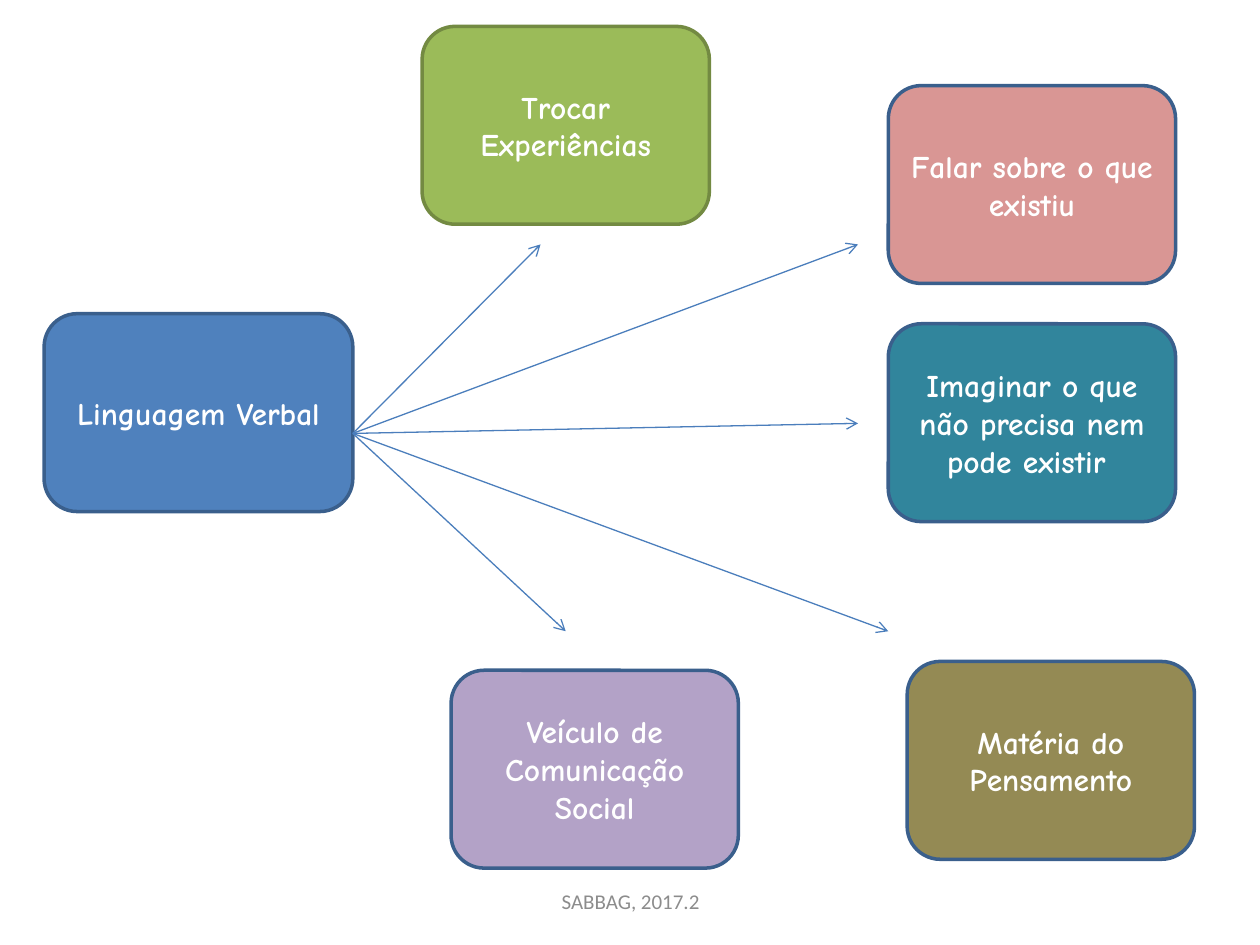
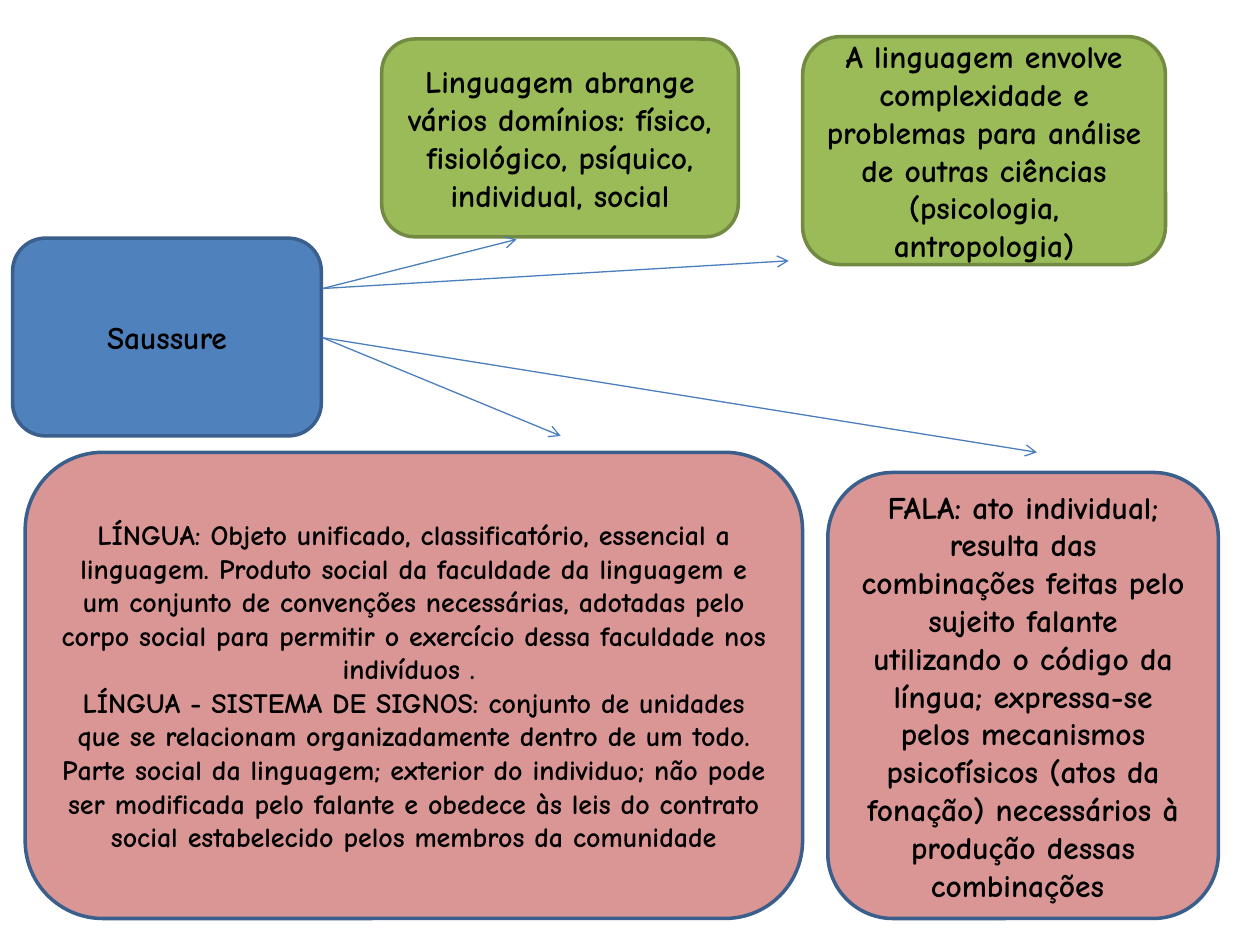
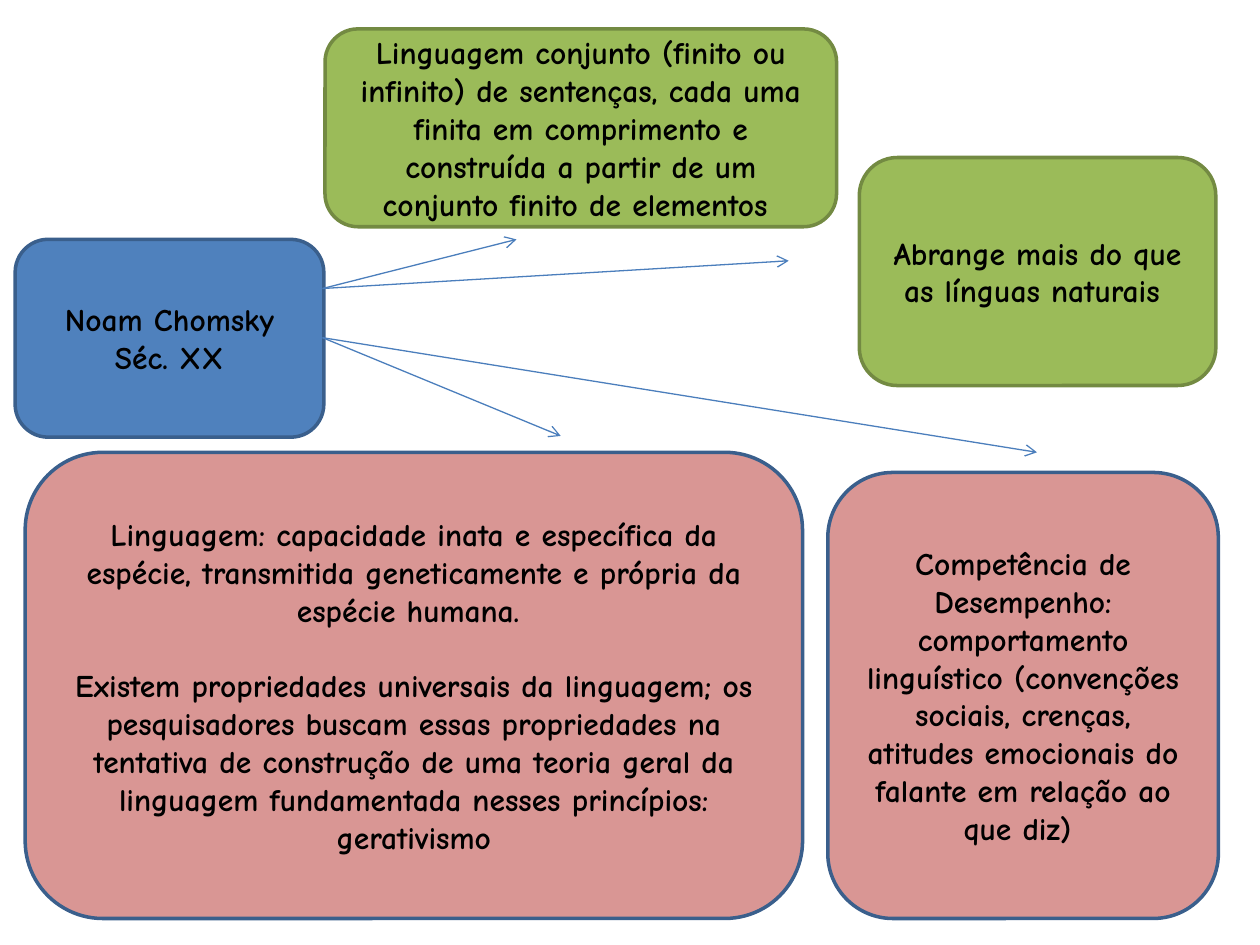
from dataclasses import dataclass

from lxml import etree
from pptx import Presentation
from pptx import util as u
from pptx.dml.color import RGBColor
from pptx.enum import shapes, text
from pptx.oxml import ns

WHITE = RGBColor(0xFF, 0xFF, 0xFF)
BLACK = RGBColor(0x00, 0x00, 0x00)
GRAY = RGBColor(0x8C, 0x8C, 0x8C)
BLUE = RGBColor(0x4F, 0x81, 0xBD)
GREEN = RGBColor(0x9B, 0xBB, 0x59)
PINK = RGBColor(0xD9, 0x96, 0x94)
TEAL = RGBColor(0x31, 0x85, 0x9C)
OLIVE = RGBColor(0x94, 0x8A, 0x54)
LILAC = RGBColor(0xB3, 0xA2, 0xC7)
BLUE_EDGE = RGBColor(0x3A, 0x5F, 0x8C)
GREEN_EDGE = RGBColor(0x73, 0x8A, 0x42)
ARROW_BLUE = RGBColor(0x4B, 0x7E, 0xBC)

BOX_FONT = "Comic Neue"
FOOTER_FONT = "Calibri"

Point = tuple[float, float]
HUB_SIZE = (2.45, 1.57)
PURPOSE_SIZE = (2.28, 1.57)
LEFT_PANEL = (0.2, 3.59, 6.17, 3.7)
RIGHT_PANEL = (6.57, 3.75, 3.1, 3.54)


@dataclass(frozen=True)
class Box:
    """A rounded box; each line of words is a paragraph, lengths in inches."""
    words: str
    left: float
    top: float
    width: float
    height: float
    fill: RGBColor
    size: int = 18
    gap: float = 0


@dataclass(frozen=True)
class Fan:
    """Arrows that leave one point."""
    start: Point
    ends: tuple[Point, ...]


@dataclass(frozen=True)
class Diagram:
    boxes: tuple[Box, ...]
    fans: tuple[Fan, ...]
    color: RGBColor = BLACK
    footer: str = ""


AUTHOR_FANS = (
    Fan((2.56, 2.68), ((4.45, 3.46), (8.23, 3.59))),
    Fan((2.56, 2.29), ((4.1, 1.9), (6.26, 2.07))),
)

DIAGRAMS = (
    Diagram(
        boxes=(
            Box("Linguagem Verbal", 0.35, 2.49, *HUB_SIZE, BLUE),
            Box("Trocar Experiências", 3.35, 0.21, *PURPOSE_SIZE, GREEN),
            Box("Falar sobre o que existiu", 7.05, 0.68, *PURPOSE_SIZE, PINK),
            Box("Imaginar o que não precisa nem pode existir ",
                7.05, 2.57, *PURPOSE_SIZE, TEAL),
            Box("Matéria do Pensamento", 7.2, 5.25, *PURPOSE_SIZE, OLIVE),
            Box("Veículo de Comunicação Social",
                3.58, 5.32, *PURPOSE_SIZE, LILAC),
        ),
        fans=(Fan((2.8, 3.44), ((4.29, 1.94), (6.81, 1.94), (6.81, 3.36),
                                (7.05, 5.01), (4.49, 5.01))),),
        color=WHITE,
        footer="SABBAG, 2017.2",
    ),
    Diagram(
        boxes=(
            Box("Saussure", 0.1, 1.89, *HUB_SIZE, BLUE),
            Box("Linguagem abrange vários domínios: físico, fisiológico, "
                "psíquico, individual, social", 3.03, 0.31, 2.83, 1.57, GREEN),
            Box("A linguagem envolve complexidade e problemas para análise "
                "de outras ciências (psicologia, antropologia)",
                6.37, 0.29, 2.88, 1.81, GREEN),
            Box("LÍNGUA: Objeto unificado, classificatório, essencial a "
                "linguagem. Produto social da faculdade da linguagem e um "
                "conjunto de convenções necessárias, adotadas pelo corpo "
                "social para permitir o exercício dessa faculdade nos "
                "indivíduos . \n"
                "LÍNGUA - SISTEMA DE SIGNOS: conjunto de unidades que se "
                "relacionam organizadamente dentro de um todo. Parte social "
                "da linguagem; exterior do individuo; não pode ser modificada "
                "pelo falante e obedece às leis do contrato social "
                "estabelecido pelos membros da comunidade",
                *LEFT_PANEL, PINK, size=16),
            Box("FALA: ato individual; resulta das combinações feitas pelo "
                "sujeito falante utilizando o código da língua; expressa-se "
                "pelos mecanismos psicofísicos (atos da fonação) necessários "
                "à produção dessas combinações ", *RIGHT_PANEL, PINK),
        ),
        fans=AUTHOR_FANS,
    ),
    Diagram(
        boxes=(
            Box("Noam Chomsky\nSéc. XX", 0.12, 1.9, *HUB_SIZE, BLUE),
            Box("Linguagem conjunto (finito ou infinito) de sentenças, cada "
                "uma finita em comprimento e construída a partir de um "
                "conjunto finito de elementos ", 2.58, 0.23, 4.06, 1.57, GREEN),
            Box("Abrange mais do que as línguas naturais ",
                6.82, 1.25, 2.83, 1.81, GREEN),
            Box("Linguagem: capacidade inata e específica da espécie, "
                "transmitida geneticamente e própria da espécie humana. \n"
                "Existem propriedades universais da linguagem; os "
                "pesquisadores buscam essas propriedades na tentativa de "
                "construção de uma teoria geral da linguagem fundamentada "
                "nesses princípios: gerativismo",
                *LEFT_PANEL, PINK, gap=21.5),
            Box("Competência de Desempenho: comportamento linguístico "
                "(convenções sociais, crenças, atitudes emocionais do falante "
                "em relação ao que diz) ", *RIGHT_PANEL, PINK),
        ),
        fans=AUTHOR_FANS,
    ),
)


def write_text(shape, words: str, font_name: str, size: int,
               color: RGBColor, bold: bool = False, gap: float = 0) -> None:
    frame = shape.text_frame
    frame.word_wrap = True
    frame.vertical_anchor = text.MSO_ANCHOR.MIDDLE
    frame.text = words
    for index, paragraph in enumerate(frame.paragraphs):
        paragraph.alignment = text.PP_ALIGN.CENTER
        if index and gap:
            paragraph.space_before = u.Pt(gap)
        for run in paragraph.runs:
            run.font.name = font_name
            run.font.size = u.Pt(size)
            run.font.bold = bold
            run.font.color.rgb = color


def draw_box(slide, box: Box, color: RGBColor) -> None:
    shape = slide.shapes.add_shape(
        shapes.MSO_SHAPE.ROUNDED_RECTANGLE, u.Inches(box.left),
        u.Inches(box.top), u.Inches(box.width), u.Inches(box.height))
    shape.shadow.inherit = False
    shape.fill.solid()
    shape.fill.fore_color.rgb = box.fill
    shape.line.color.rgb = GREEN_EDGE if box.fill == GREEN else BLUE_EDGE
    shape.line.width = u.Pt(2)
    write_text(shape, box.words, BOX_FONT, box.size, color, True, box.gap)


def draw_arrow(slide, start: Point, end: Point) -> None:
    connector = slide.shapes.add_connector(
        shapes.MSO_CONNECTOR.STRAIGHT,
        *(u.Inches(value) for value in (*start, *end)))
    connector.line.color.rgb = ARROW_BLUE
    connector.line.width = u.Pt(0.75)
    properties = connector.element.spPr
    line = properties.find(ns.qn("a:ln"))
    etree.SubElement(line, ns.qn("a:tailEnd"), type="arrow")
    etree.SubElement(properties, ns.qn("a:effectLst"))


def draw_footer(slide, words: str) -> None:
    footer = slide.shapes.add_textbox(
        u.Inches(3.42), u.Inches(6.95), u.Inches(3.17), u.Inches(0.4))
    write_text(footer, words, FOOTER_FONT, 12, GRAY)


def draw_diagram(slide, diagram: Diagram) -> None:
    if diagram.footer:
        draw_footer(slide, diagram.footer)
    for box in diagram.boxes:
        draw_box(slide, box, diagram.color)
    for fan in diagram.fans:
        for end in fan.ends:
            draw_arrow(slide, fan.start, end)


def main() -> None:
    presentation = Presentation()
    presentation.slide_width = u.Inches(10)
    presentation.slide_height = u.Inches(7.5)
    blank_layout = presentation.slide_layouts[6]
    for diagram in DIAGRAMS:
        draw_diagram(presentation.slides.add_slide(blank_layout), diagram)
    presentation.save("out.pptx")


if __name__ == "__main__":
    main()
